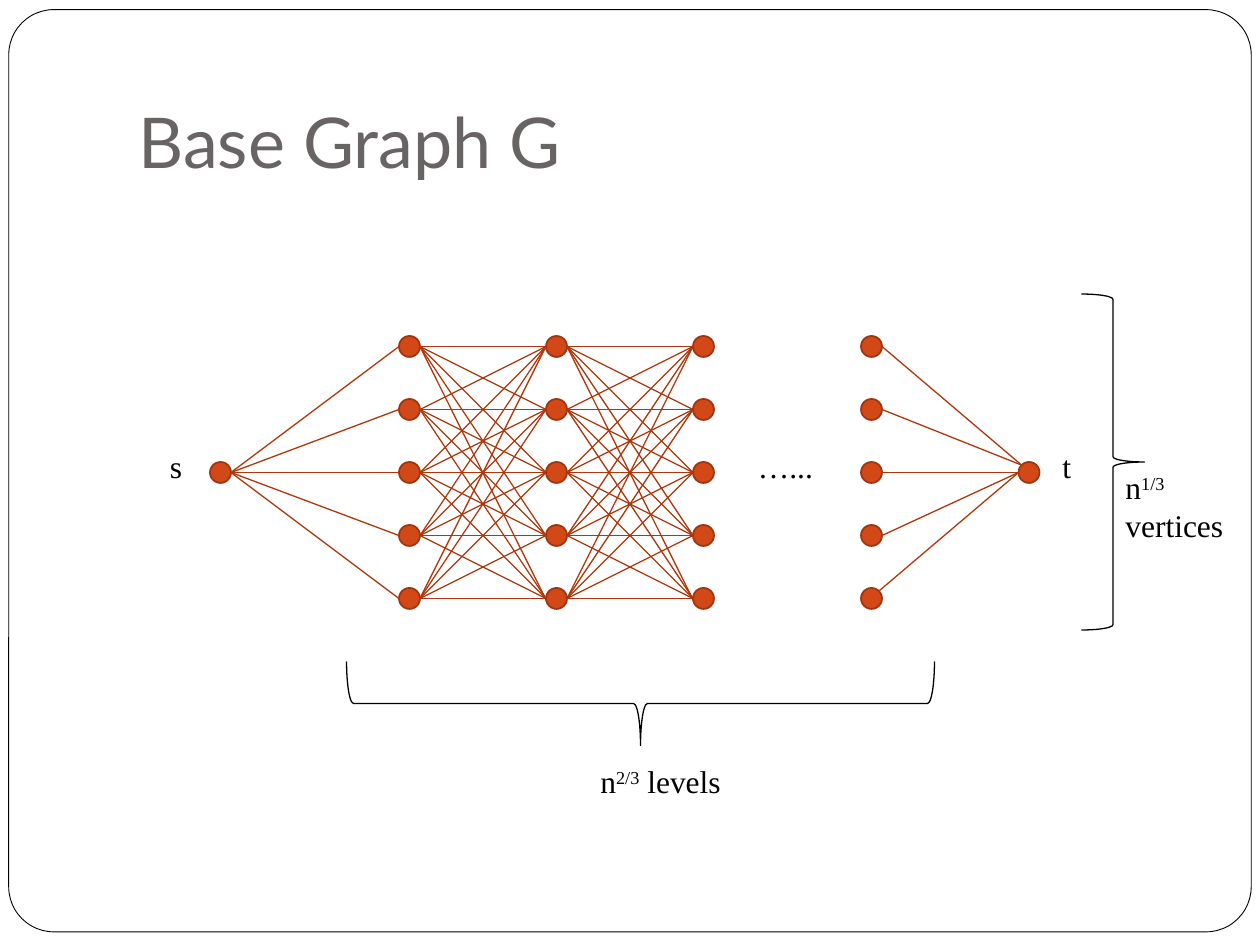
from dataclasses import dataclass
from itertools import pairwise, product

from lxml import etree
from pptx import Presentation
from pptx.dml.color import RGBColor
from pptx.enum import shapes, text
from pptx.oxml import ns
from pptx.util import Pt


@dataclass(frozen=True)
class Theme:
    """Colours, fonts and sizes of the slide."""
    paper: RGBColor = RGBColor.from_string("FFFFFF")
    ink: RGBColor = RGBColor.from_string("000000")
    title: RGBColor = RGBColor.from_string("696464")
    node: RGBColor = RGBColor.from_string("D34817")
    node_line: RGBColor = RGBColor.from_string("9C3511")
    edge: RGBColor = RGBColor.from_string("B1360B")
    title_font: str = "Lato"
    label_font: str = "Times New Roman"
    title_size: int = 40
    label_size: int = 18
    frame_width: float = 0.5
    line_width: float = 0.75
    node_line_width: float = 1


THEME = Theme()
NODE = 12
ROWS = 5
ROW_GAP = 36
SITES = {
    "left": (0, 0.5),
    "right": (1, 0.5),
    "top_left": (0.15, 0.15),
    "top_right": (0.85, 0.15),
    "bottom_left": (0.15, 0.85),
}


def add_outline(slide, kind, box, color, width, fill=None):
    """Add a preset shape with a line and an optional fill."""
    shape = slide.shapes.add_shape(kind, *map(Pt, box))
    shape.shadow.inherit = False
    shape.line.color.rgb = color
    shape.line.width = Pt(width)
    if fill is None:
        shape.fill.background()
    else:
        shape.fill.solid()
        shape.fill.fore_color.rgb = fill
    return shape


def style(paragraph, font_name, size, color):
    """Set the font of a whole paragraph."""
    paragraph.font.name = font_name
    paragraph.font.size = Pt(size)
    paragraph.font.color.rgb = color


def add_label(slide, box, *lines):
    """Add a label; each line is a base, or a base, superscript and rest."""
    frame = slide.shapes.add_textbox(*map(Pt, box)).text_frame
    frame.word_wrap = True
    frame.auto_size = text.MSO_AUTO_SIZE.SHAPE_TO_FIT_TEXT
    for index, parts in enumerate(lines):
        paragraph = frame.add_paragraph() if index else frame.paragraphs[0]
        style(paragraph, THEME.label_font, THEME.label_size, THEME.ink)
        for position, part in enumerate(parts):
            run = paragraph.add_run()
            run.text = part
            if position == 1:
                run._r.get_or_add_rPr().set("baseline", "30000")


def add_node(slide, left, top):
    """Add one vertex of the graph."""
    return add_outline(slide, shapes.MSO_SHAPE.OVAL, (left, top, NODE, NODE),
                       THEME.node_line, THEME.node_line_width, THEME.node)


def site(node, name):
    """Return the point of a named site on a vertex."""
    across, down = SITES[name]
    return (round(node.left + across * node.width),
            round(node.top + down * node.height))


def add_edge(slide, start, end, start_site="right", end_site="left"):
    """Draw an edge between two vertices."""
    edge = slide.shapes.add_connector(
        shapes.MSO_CONNECTOR.STRAIGHT, *site(start, start_site), *site(end, end_site))
    edge.line.color.rgb = THEME.edge
    edge.line.width = Pt(THEME.line_width)
    etree.SubElement(edge.element.spPr, ns.qn("a:effectLst"))


def add_frame(slide, box):
    """Put the rounded page frame behind everything else."""
    frame = add_outline(slide, shapes.MSO_SHAPE.ROUNDED_RECTANGLE, box,
                        THEME.ink, THEME.frame_width, THEME.paper)
    frame.adjustments[0] = 0.049
    frame.element.getparent().insert(2, frame.element)


def add_title(slide, box, wording):
    """Place and format the title placeholder."""
    title = slide.shapes.title
    title.left, title.top, title.width, title.height = map(Pt, box)
    frame = title.text_frame
    frame.text = wording
    frame.vertical_anchor = text.MSO_ANCHOR.BOTTOM
    frame.margin_bottom = Pt(7.2)
    paragraph = frame.paragraphs[0]
    paragraph.alignment = text.PP_ALIGN.LEFT
    style(paragraph, THEME.title_font, THEME.title_size, THEME.title)


def add_graph(slide, box):
    """Draw the layered graph from s to t with its labels."""
    left, top, width, height = box
    middle = top + (height - NODE) / 2
    levels = [[add_node(slide, left + offset, top + row * ROW_GAP)
               for row in range(ROWS)] for offset in (108, 192, 276, 372)]
    source = add_node(slide, left, middle)
    sink = add_node(slide, left + width - NODE, middle)

    for node in levels[0]:
        add_edge(slide, source, node)
    for before, after in pairwise(levels[:3]):
        for start, end in product(before, after):
            steepest = start is before[0] and end is after[-1]
            add_edge(slide, start, end,
                     end_site="bottom_left" if steepest else "left")
    for row, node in enumerate(levels[-1]):
        add_edge(slide, node, sink,
                 "top_right" if row == ROWS - 1 else "right",
                 "top_left" if row < ROWS // 2 else "left")

    for offset, label_width, label in ((-30, 36, "s"), (306, 54, "…..."), (480, 36, "t")):
        add_label(slide, (left + offset, middle - 12, label_width, 29), [label])


def add_level_brace(slide, box):
    """Draw the brace below the graph and name the number of levels."""
    left, top, width, height = box
    turned = (left + (width - height) / 2, top - (width - height) / 2, height, width)
    brace = add_outline(slide, shapes.MSO_SHAPE.RIGHT_BRACE, turned,
                        THEME.ink, THEME.line_width)
    brace.rotation = 90
    add_label(slide, (left + 138, top + height + 6, 138, 29), ["n", "2/3", " levels"])


def add_vertex_brace(slide, box):
    """Draw the brace beside the graph and name the number of vertices."""
    left, top, width, height = box
    add_outline(slide, shapes.MSO_SHAPE.RIGHT_BRACE, box, THEME.ink, THEME.line_width)
    add_label(slide, (left + width / 2, top + height / 2, 84, 51),
              ["n", "1/3"], ["vertices"])


def main():
    """Build and save the slide."""
    presentation = Presentation()
    presentation.slide_width, presentation.slide_height = Pt(720), Pt(540)
    slide = presentation.slides.add_slide(presentation.slide_layouts[5])
    add_frame(slide, (5, 5.5, 710, 527))
    add_title(slide, (72, 21.6, 612, 90), "Base Graph G")
    add_graph(slide, (120, 192, 474, 156))
    add_level_brace(slide, (198, 378, 336, 48))
    add_vertex_brace(slide, (618, 168, 36, 192))
    presentation.save("out.pptx")


if __name__ == "__main__":
    main()
